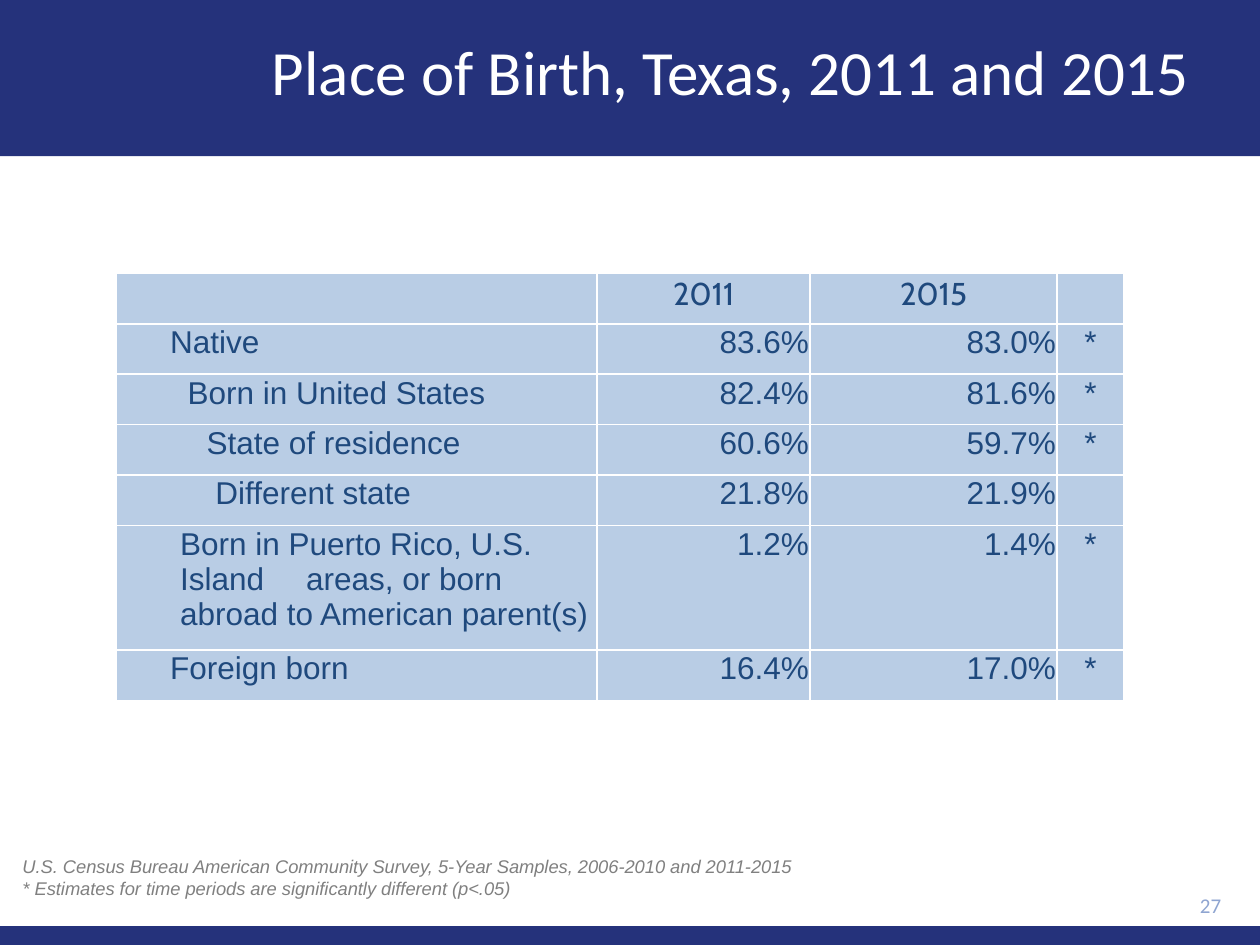
from dataclasses import dataclass

from lxml.etree import SubElement
from pptx import Presentation
from pptx.dml.color import RGBColor
from pptx.enum.shapes import MSO_SHAPE
from pptx.enum.text import MSO_ANCHOR, MSO_AUTO_SIZE, PP_ALIGN
from pptx.oxml.ns import qn
from pptx.util import Inches, Pt


@dataclass(frozen=True)
class Theme:
    band: str = "25327B"
    white: str = "FFFFFF"
    cell: str = "B9CDE5"
    ink: str = "1F497D"
    note: str = "808080"
    number: str = "8FA5D1"
    heading_font: str = "Calibri"
    body_font: str = "Arial"
    year_font: str = "Cabin"
    title_size: float = 36
    table_size: float = 18
    number_size: float = 12
    note_size: float = 10.5
    border_width: float = 1


class SlideBuilder:
    def __init__(self, deck, theme):
        self.theme = theme
        self.page = deck.slides.add_slide(deck.slide_layouts[5])

    def add_span(self, para, text, font, size, color, align=PP_ALIGN.LEFT, italic=False):
        para.alignment = align
        span = para.add_run()
        span.text = text
        span.font.name = font
        span.font.size = Pt(size)
        span.font.italic = italic
        span.font.color.rgb = RGBColor.from_string(color)

    def band(self, top, height):
        bar = self.page.shapes.add_shape(
            MSO_SHAPE.RECTANGLE, 0, Inches(top), Inches(10), Inches(height))
        bar.shadow.inherit = False
        bar.fill.solid()
        bar.fill.fore_color.rgb = RGBColor.from_string(self.theme.band)
        bar.line.fill.background()
        # Keep the band behind the title
        self.page.shapes.title.element.addprevious(bar.element)

    def title(self, text, left, top, width, height):
        box = self.page.shapes.title
        box.left, box.top = Inches(left), Inches(top)
        box.width, box.height = Inches(width), Inches(height)
        frame = box.text_frame
        frame.auto_size = MSO_AUTO_SIZE.NONE
        frame.vertical_anchor = MSO_ANCHOR.MIDDLE
        para = frame.paragraphs[0]
        para.line_spacing = 0.9
        self.add_span(para, text, self.theme.heading_font, self.theme.title_size,
                      self.theme.white, PP_ALIGN.CENTER)

    def text(self, lines, left, top, width, height, anchor=MSO_ANCHOR.TOP, **style):
        box = self.page.shapes.add_textbox(
            Inches(left), Inches(top), Inches(width), Inches(height))
        frame = box.text_frame
        frame.word_wrap = True
        frame.vertical_anchor = anchor
        for index, line in enumerate(lines):
            para = frame.add_paragraph() if index else frame.paragraphs[0]
            self.add_span(para, line, **style)

    def style_cell(self, cell):
        cell.margin_left = cell.margin_right = cell.margin_top = Inches(0.01)
        cell.margin_bottom = 0
        properties = cell._tc.get_or_add_tcPr()
        for side in ("lnL", "lnR", "lnT", "lnB"):
            line = SubElement(properties, qn(f"a:{side}"),
                              w=str(Pt(self.theme.border_width)))
            fill = SubElement(line, qn("a:solidFill"))
            SubElement(fill, qn("a:srgbClr"), val=self.theme.white)
        cell.fill.solid()
        cell.fill.fore_color.rgb = RGBColor.from_string(self.theme.cell)

    def indent(self, para, margin, tab_stop):
        properties = para._p.get_or_add_pPr()
        properties.set("marL", str(Inches(margin)))
        properties.set("indent", "0")
        if tab_stop:
            tabs = SubElement(properties, qn("a:tabLst"))
            SubElement(tabs, qn("a:tab"), pos=str(Inches(tab_stop)), algn="l")

    def table(self, years, records, left, top, widths, heights):
        rows = [("", *years, "")] + [record[1:] for record in records]
        table = self.page.shapes.add_table(
            len(rows), len(widths), Inches(left), Inches(top),
            Inches(sum(widths)), Inches(sum(heights))).table
        table.first_row = table.horz_banding = False
        for column, width in zip(table.columns, widths):
            column.width = Inches(width)
        for row, height in zip(table.rows, heights):
            row.height = Inches(height)

        aligns = (PP_ALIGN.LEFT, PP_ALIGN.RIGHT, PP_ALIGN.RIGHT, PP_ALIGN.CENTER)
        for r, values in enumerate(rows):
            font = self.theme.body_font if r else self.theme.year_font
            for c, value in enumerate(values):
                cell = table.cell(r, c)
                self.style_cell(cell)
                para = cell.text_frame.paragraphs[0]
                if r and c == 0:
                    self.indent(para, records[r - 1][0], 1.45 if "\t" in value else None)
                if value:
                    self.add_span(para, value, font, self.theme.table_size,
                                  self.theme.ink, aligns[c] if r else PP_ALIGN.CENTER)
                else:
                    para.font.size = Pt(self.theme.table_size)


# Indent in inches, place of birth, 2011, 2015, significance mark
BIRTHPLACES = [
    (0.42, "Native", "83.6%", "83.0%", "*"),
    (0.56, "Born in United States", "82.4%", "81.6%", "*"),
    (0.71, "State of residence", "60.6%", "59.7%", "*"),
    (0.78, "Different state", "21.8%", "21.9%", ""),
    (0.5, "Born in Puerto Rico, U.S. Island\tareas, or born abroad to American parent(s)",
     "1.2%", "1.4%", "*"),
    (0.42, "Foreign born", "16.4%", "17.0%", "*"),
]


def main():
    deck = Presentation()
    deck.slide_width, deck.slide_height = Inches(10), Inches(7.5)
    theme = Theme()
    slide = SlideBuilder(deck, theme)

    # Header and footer bands with the title
    slide.band(0, 1.24)
    slide.band(7.35, 0.15)
    slide.title("Place of Birth, Texas, 2011 and 2015", 1.7, 0.1, 8.2, 1)

    # Slide number
    slide.text(["27"], 8.9, 7.01, 0.89, 0.34, MSO_ANCHOR.MIDDLE,
               font=theme.heading_font, size=theme.number_size,
               color=theme.number, align=PP_ALIGN.RIGHT)

    # Birthplace shares
    slide.table(("2011", "2015"), BIRTHPLACES, 0.92, 2.17,
                widths=(3.82, 1.69, 1.96, 0.53),
                heights=[0.4] * 5 + [0.99, 0.4])

    # Source and significance note
    slide.text(["U.S. Census Bureau American Community Survey, 5-Year Samples, "
                "2006-2010 and 2011-2015",
                "* Estimates for time periods are significantly different (p<.05)"],
               0.08, 6.74, 7.55, 0.45, font=theme.body_font, size=theme.note_size,
               color=theme.note, italic=True)

    deck.save("out.pptx")


if __name__ == "__main__":
    main()
